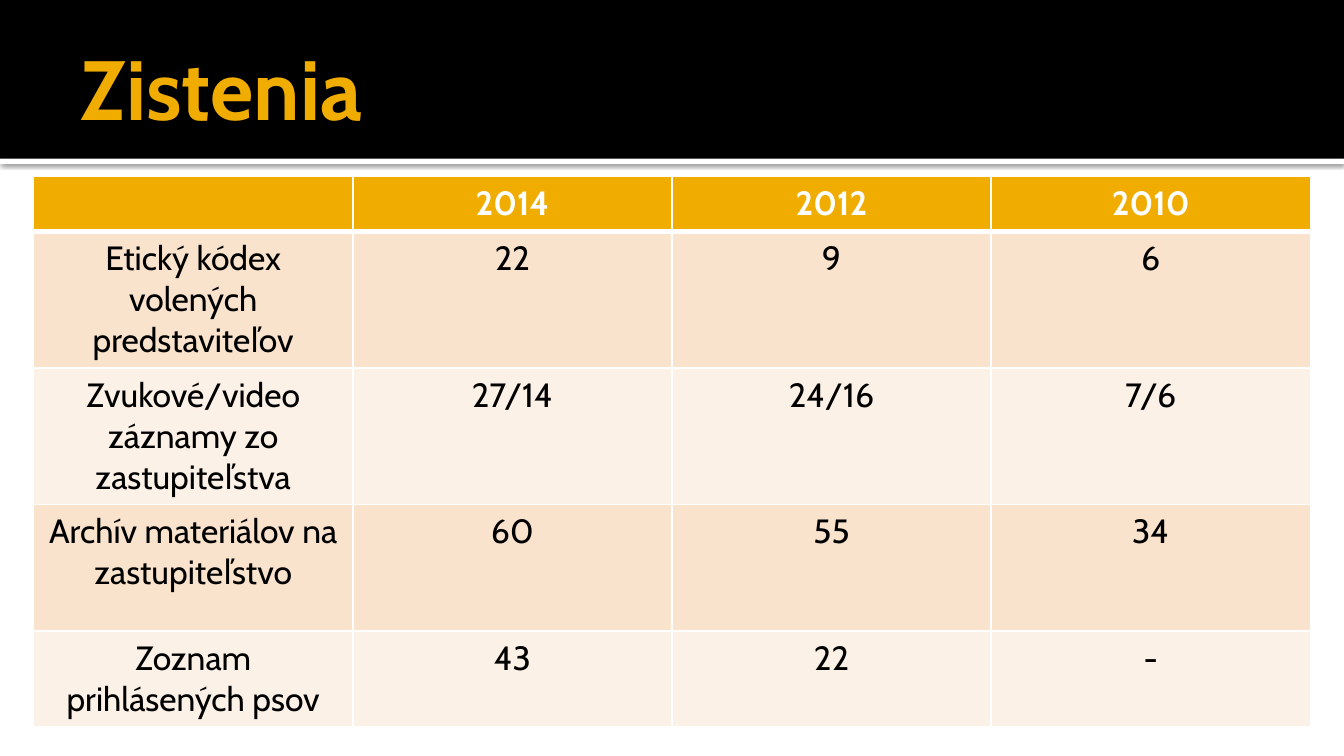
from lxml.etree import SubElement
from pptx import Presentation
from pptx.dml.color import RGBColor
from pptx.enum.shapes import MSO_SHAPE
from pptx.enum.text import MSO_ANCHOR, PP_ALIGN
from pptx.oxml.ns import qn
from pptx.util import Inches, Pt

# Content
TITLE = "Zistenia"
FINDINGS = [
    ("", "2014", "2012", "2010"),
    ("Etický kódex volených predstaviteľov", "22", "9", "6"),
    ("Zvukové/video záznamy zo zastupiteľstva", "27/14", "24/16", "7/6"),
    ("Archív materiálov na zastupiteľstvo", "60", "55", "34"),
    ("Zoznam prihlásených psov", "43", "22", "-"),
]
ROW_HEIGHTS = [0.41, 1.02, 0.94, 0.94, 0.71]

THEME = {
    "font": "Cabin", "title_size": 45, "table_size": 18,
    "accent": "F0AD00", "dark": "000000", "light": "FFFFFF",
    "stripes": ("F9E3CC", "FCF1E7"),
}
SLIDE_WIDTH = 10
SLIDE_HEIGHT = SLIDE_WIDTH * 9 / 16
BANNER_HEIGHT, RULE_HEIGHT = 1.18, 0.04
TABLE_LEFT, TABLE_TOP, TABLE_WIDTH = 0.25, 1.31, 9.5


def style_text(paragraph, size, color, bold):
    for run in paragraph.runs:
        run.font.name = THEME["font"]
        run.font.size = Pt(size)
        run.font.bold = bold
        run.font.color.rgb = RGBColor.from_string(color)


def add_band(slide, top, height, color):
    band = slide.shapes.add_shape(
        MSO_SHAPE.RECTANGLE, 0, Inches(top), Inches(SLIDE_WIDTH), Inches(height))
    band.shadow.inherit = False
    band.fill.solid()
    band.fill.fore_color.rgb = RGBColor.from_string(color)
    band.line.fill.background()
    return band


def add_shadow(band):
    effects = band._element.spPr.find(qn("a:effectLst"))
    shadow = SubElement(effects, qn("a:outerShdw"), blurRad=str(Pt(2.5)),
                        dist=str(Pt(0.8)), dir="5400000", rotWithShape="0")
    color = SubElement(shadow, qn("a:srgbClr"), val=THEME["dark"])
    SubElement(color, qn("a:alpha"), val="60000")


def set_borders(cell, top, bottom):
    properties = cell._tc.get_or_add_tcPr()
    for side, width in (("L", 1), ("R", 1), ("T", top), ("B", bottom)):
        border = SubElement(properties, qn(f"a:ln{side}"), w=str(Pt(width)))
        fill = SubElement(border, qn("a:solidFill"))
        SubElement(fill, qn("a:srgbClr"), val=THEME["light"])


presentation = Presentation()
presentation.slide_width = Inches(SLIDE_WIDTH)
presentation.slide_height = Inches(SLIDE_HEIGHT)
slide = presentation.slides.add_slide(presentation.slide_layouts[5])

# Banner with a shadowed rule below it
rule = add_band(slide, BANNER_HEIGHT, RULE_HEIGHT, THEME["light"])
add_shadow(rule)
add_band(slide, 0, BANNER_HEIGHT, THEME["dark"])

# Title, brought in front of the banner
title = slide.shapes.title
slide.shapes._spTree.append(title._element)
title.left, title.top = Inches(0.5), Inches(0.13)
title.width, title.height = Inches(9), Inches(1.03)
title_frame = title.text_frame
title_frame.text = TITLE
title_frame.vertical_anchor = MSO_ANCHOR.MIDDLE
title_frame.margin_left = Inches(0.1)
title_frame.margin_top = title_frame.margin_right = title_frame.margin_bottom = Inches(0.05)
title_frame.paragraphs[0].alignment = PP_ALIGN.LEFT
style_text(title_frame.paragraphs[0], THEME["title_size"], THEME["accent"], True)

# Findings table
findings = slide.shapes.add_table(
    len(FINDINGS), len(FINDINGS[0]), Inches(TABLE_LEFT), Inches(TABLE_TOP),
    Inches(TABLE_WIDTH), Inches(sum(ROW_HEIGHTS))).table
for row, height in zip(findings.rows, ROW_HEIGHTS):
    row.height = Inches(height)

for row_index, values in enumerate(FINDINGS):
    is_header = row_index == 0
    fill_color = THEME["accent"] if is_header else THEME["stripes"][(row_index - 1) % 2]
    text_color = THEME["light"] if is_header else THEME["dark"]
    for column_index, value in enumerate(values):
        cell = findings.cell(row_index, column_index)
        set_borders(cell, top=3 if row_index == 1 else 1, bottom=3 if is_header else 1)
        cell.fill.solid()
        cell.fill.fore_color.rgb = RGBColor.from_string(fill_color)
        cell.text_frame.text = value
        paragraph = cell.text_frame.paragraphs[0]
        paragraph.alignment = PP_ALIGN.CENTER
        style_text(paragraph, THEME["table_size"], text_color, is_header)

presentation.save("out.pptx")
